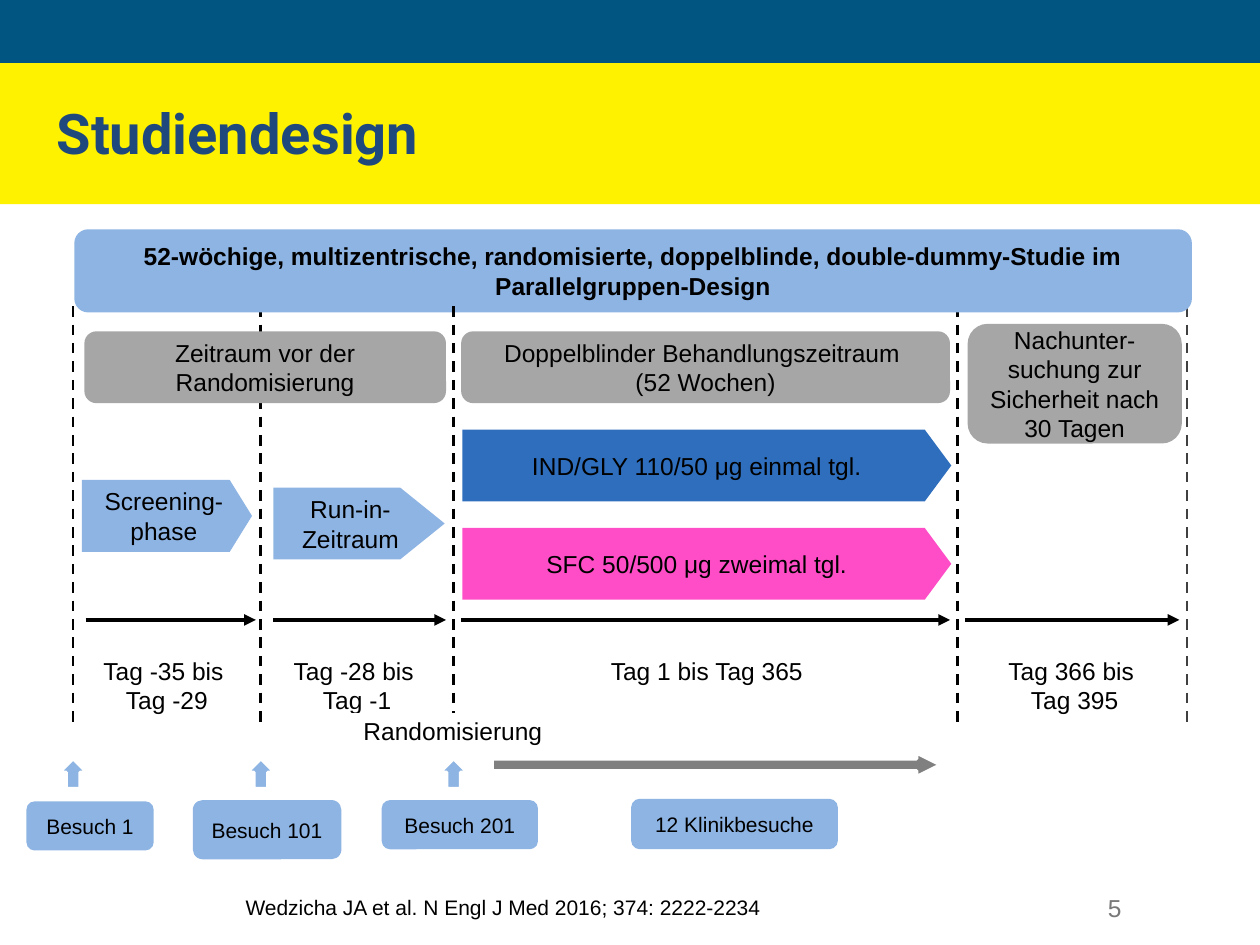
from lxml import etree
from pptx import Presentation
from pptx import util as u
from pptx.dml.color import RGBColor
from pptx.enum import dml, shapes, text
from pptx.oxml.ns import qn

PX = 9144  # EMU; 100 px to the inch
BLACK, WHITE, GRAY = "000000", "FFFFFF", "A6A6A6"
LIGHT_BLUE, DARK_BLUE, PINK = "8EB4E3", "2E6EBC", "FF4DC7"
KIND = shapes.MSO_SHAPE
LEFT, CENTER, RIGHT = text.PP_ALIGN.LEFT, text.PP_ALIGN.CENTER, text.PP_ALIGN.RIGHT
TOP, MIDDLE = text.MSO_ANCHOR.TOP, text.MSO_ANCHOR.MIDDLE
DEFAULT_INSETS = (10, 5, 10, 5)
NO_INSETS = (0, 0, 0, 0)


def px(*lengths):
    return [u.Emu(length * PX) for length in lengths]


def color(hex_string):
    return RGBColor.from_string(hex_string)


def write(shape, words, size=14, font="Arial", ink=BLACK, bold=False, align=CENTER,
          anchor=MIDDLE, insets=DEFAULT_INSETS, wrap=True):
    frame = shape.text_frame
    frame.text = words
    frame.word_wrap = wrap
    frame.vertical_anchor = anchor
    (frame.margin_left, frame.margin_top,
     frame.margin_right, frame.margin_bottom) = px(*insets)
    for paragraph in frame.paragraphs:
        paragraph.alignment = align
        for run in paragraph.runs:
            run.font.size = u.Pt(size)
            run.font.name = font
            run.font.bold = bold
            run.font.color.rgb = color(ink)


def add_box(slide, kind, box, fill, words=None, **style):
    shape = slide.shapes.add_shape(kind, *px(*box))
    shape.shadow.inherit = False
    shape.fill.solid()
    shape.fill.fore_color.rgb = color(fill)
    shape.line.fill.background()
    if words:
        write(shape, words, **style)
    return shape


def add_pentagon(slide, box, fill, point, words, **style):
    shape = add_box(slide, KIND.PENTAGON, box, fill, words, **style)
    shape.adjustments[0] = point


def add_block_arrow(slide, box, fill, rotation):
    shape = add_box(slide, KIND.DOWN_ARROW, box, fill)
    shape.rotation = rotation
    shape.line.color.rgb = color(WHITE)
    shape.line.width = u.Pt(2)
    return shape


def add_line(slide, start, end, width, ink=BLACK):
    line = slide.shapes.add_connector(shapes.MSO_CONNECTOR.STRAIGHT, *px(*start, *end))
    line.line.color.rgb = color(ink)
    line.line.width = u.Pt(width)
    etree.SubElement(line.element.spPr, qn("a:effectLst"))
    return line


def add_divider(slide, x, ink=BLACK):
    line = add_line(slide, (x, 243), (x, 575), 1.5, ink)
    line.line.dash_style = dml.MSO_LINE.DASH


def add_period_arrow(slide, left, right):
    line = add_line(slide, (left, 492), (right, 492), 2.25)
    outline = line.element.spPr.find(qn("a:ln"))
    etree.SubElement(outline, qn("a:tailEnd"), type="triangle")


def add_text(slide, box, words, **style):
    shape = slide.shapes.add_textbox(*px(*box))
    write(shape, words, **style)
    return shape


def add_frame(slide):
    # Bands, title, source and page number
    add_box(slide, KIND.RECTANGLE, (0, -1, 1000, 51), "005581")
    add_box(slide, KIND.RECTANGLE, (0, 50, 1000, 112), "FFF200")
    title = slide.shapes.title
    title.left, title.top, title.width, title.height = px(45, 58, 900, 93)
    write(title, "Studiendesign", size=32, font="Roboto", ink="1F497D", bold=True,
          align=LEFT, insets=NO_INSETS)
    title.element.getparent().append(title.element)  # in front of the bands
    source = add_text(slide, (185, 705, 432, 30),
                      "Wedzicha JA et al. N Engl J Med 2016; 374: 2222-2234",
                      size=12, align=LEFT, anchor=TOP, wrap=False)
    source.text_frame.auto_size = text.MSO_AUTO_SIZE.SHAPE_TO_FIT_TEXT
    add_text(slide, (667, 704, 233, 40), "5", ink="797979", align=RIGHT, anchor=TOP)


def add_phases(slide):
    # Dividers and headings
    for x in (58, 207, 760):
        add_divider(slide, x)
    add_divider(slide, 942, "404040")
    add_box(slide, KIND.ROUNDED_RECTANGLE, (59, 182, 887, 66), LIGHT_BLUE,
            "52-wöchige, multizentrische, randomisierte, doppelblinde, "
            "double-dummy-Studie im Parallelgruppen-Design", bold=True, insets=NO_INSETS)
    add_divider(slide, 360)
    headings = [
        ((67, 263, 287, 57), "Zeitraum vor der Randomisierung"),
        ((366, 263, 388, 57), "Doppelblinder Behandlungszeitraum \n(52 Wochen)"),
        ((768, 257, 170, 95), "Nachunter-\vsuchung zur Sicherheit nach 30 Tagen"),
    ]
    for box, words in headings:
        add_box(slide, KIND.ROUNDED_RECTANGLE, box, GRAY, words)

    # Treatment arms and the phases before them
    early, arm = (4, 5, 0, 5), (8, 0, 8, 0)
    add_pentagon(slide, (65, 381, 135, 57), LIGHT_BLUE, 0.31, "Screening-\vphase",
                 insets=early)
    add_pentagon(slide, (217, 387, 136, 57), LIGHT_BLUE, 0.62, "Run-in-Zeitraum",
                 insets=early)
    add_pentagon(slide, (367, 341, 388, 57), DARK_BLUE, 0.37,
                 "IND/GLY 110/50 μg einmal tgl. ", insets=arm, wrap=False)
    add_pentagon(slide, (367, 419, 388, 57), PINK, 0.37,
                 "SFC 50/500 μg zweimal tgl. ", insets=arm, wrap=False)


def add_timeline(slide):
    # Day ranges: arrow ends, label left and width
    periods = [
        (68, 203, 65, 135, "Tag -35 bis \vTag -29"),
        (217, 354, 215, 137, "Tag -28 bis \vTag -1"),
        (366, 754, 367, 388, "Tag 1 bis Tag 365"),
        (766, 936, 768, 170, "Tag 366 bis \vTag 395"),
    ]
    for start, end, left, width, words in periods:
        add_period_arrow(slide, start, end)
        add_box(slide, KIND.ROUNDED_RECTANGLE, (left, 518, width, 54), WHITE, words,
                anchor=TOP, insets=NO_INSETS)
    add_box(slide, KIND.RECTANGLE, (251, 566, 217, 28), WHITE, "Randomisierung")


def add_visits(slide):
    visits = [
        ((21, 636, 101, 39), "Besuch 1"),
        ((153, 635, 118, 47), "Besuch 101"),
        ((303, 635, 124, 39), "Besuch 201"),
        ((501, 634, 164, 40), "12 Klinikbesuche"),
    ]
    for box, words in visits:
        add_box(slide, KIND.ROUNDED_RECTANGLE, box, LIGHT_BLUE, words, size=12)
    for x in (58, 207, 360):
        add_block_arrow(slide, (x - 11, 602, 22, 24), LIGHT_BLUE, 180)
    clinic_arrow = add_block_arrow(slide, (559, 429, 19, 356), "808080", 270)
    clinic_arrow.adjustments[1] = 1


def main():
    presentation = Presentation()
    presentation.slide_width, presentation.slide_height = px(1000, 750)
    slide = presentation.slides.add_slide(presentation.slide_layouts[5])
    add_frame(slide)
    add_phases(slide)
    add_timeline(slide)
    add_visits(slide)
    presentation.save("out.pptx")


if __name__ == "__main__":
    main()
